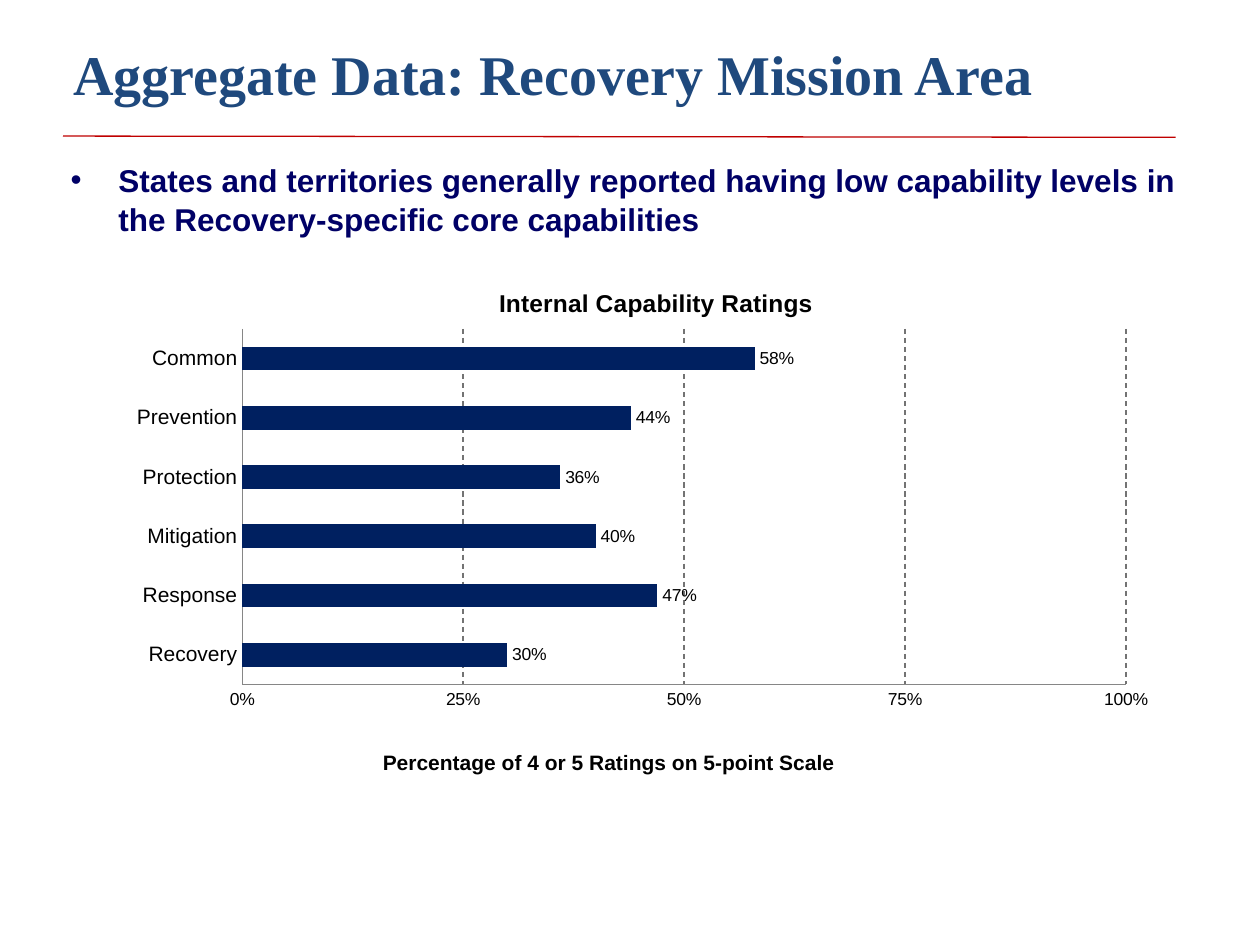
from typing import NamedTuple

from lxml import etree
from pptx import Presentation
from pptx.chart.data import CategoryChartData
from pptx.dml.color import RGBColor
from pptx.enum.chart import XL_CHART_TYPE, XL_LABEL_POSITION, XL_TICK_MARK
from pptx.enum.dml import MSO_LINE
from pptx.enum.text import MSO_ANCHOR, MSO_AUTO_SIZE, PP_ALIGN
from pptx.oxml.ns import qn
from pptx.util import Inches, Pt

BAR_CLUSTERED = XL_CHART_TYPE.BAR_CLUSTERED
OUTSIDE_END = XL_LABEL_POSITION.OUTSIDE_END
NO_TICK = XL_TICK_MARK.NONE
DASH = MSO_LINE.DASH
MIDDLE, TOP = MSO_ANCHOR.MIDDLE, MSO_ANCHOR.TOP
NO_AUTOFIT = MSO_AUTO_SIZE.NONE
LEFT = PP_ALIGN.LEFT

COLORS = {
    "title": "1F497D",
    "bullet": "000066",
    "rule": "C00000",
    "bar": "002060",
    "axis": "868686",
    "grid": "737373",
    "text": "000000",
}


class Rating(NamedTuple):
    mission_area: str
    share: float


RATINGS = [
    Rating("Recovery", 0.30),
    Rating("Response", 0.47),
    Rating("Mitigation", 0.40),
    Rating("Protection", 0.36),
    Rating("Prevention", 0.44),
    Rating("Common", 0.58),
]


def rgb(role: str) -> RGBColor:
    return RGBColor.from_string(COLORS[role])


def style_font(font, size: float, color: str = "text", bold: bool = False,
               name: str = "Arial") -> None:
    font.name, font.size, font.bold = name, Pt(size), bold
    font.color.rgb = rgb(color)


def style_line(line, color: str) -> None:
    line.color.rgb = rgb(color)
    line.width = Pt(0.75)


def write_text(frame, text: str, **font_format):
    """Put one formatted paragraph in a text frame and return it."""
    paragraph = frame.paragraphs[0]
    run = paragraph.add_run()
    run.text = text
    style_font(run.font, **font_format)
    return paragraph


def place(shape, left: float, top: float, width: float, height: float) -> None:
    shape.left, shape.top = Inches(left), Inches(top)
    shape.width, shape.height = Inches(width), Inches(height)


def set_layout(parent, **fractions: float) -> None:
    """Fix a chart part at fractions (x, y, w, h) of the chart area."""
    layout = parent.find(qn("c:layout"))
    if layout is None:
        layout = etree.Element(qn("c:layout"))
        parent.insert(0, layout)
    manual = etree.SubElement(layout, qn("c:manualLayout"))
    if "w" in fractions:
        etree.SubElement(manual, qn("c:layoutTarget"), val="inner")
    for key in ("x", "y"):
        etree.SubElement(manual, qn(f"c:{key}Mode"), val="edge")
    for key, value in fractions.items():
        etree.SubElement(manual, qn(f"c:{key}"), val=str(value))


def add_heading(slide) -> None:
    title = slide.shapes.title
    place(title, 0.48, 0.08, 9, 1)
    frame = title.text_frame
    frame.auto_size, frame.vertical_anchor = NO_AUTOFIT, MIDDLE
    write_text(frame, "Aggregate Data: Recovery Mission Area", size=32,
               color="title", bold=True, name="Times New Roman").alignment = LEFT

    rule = slide.shapes.add_connector(1, Inches(0.5), Inches(1.08),
                                      Inches(9.33), Inches(1.09))
    style_line(rule.line, "rule")
    etree.SubElement(rule._element.spPr, qn("a:effectLst"))


def add_finding(slide) -> None:
    body = slide.placeholders[1]
    place(body, 0.46, 1.21, 9, 6.17)
    frame = body.text_frame
    frame.auto_size, frame.vertical_anchor = NO_AUTOFIT, TOP
    finding = write_text(
        frame,
        "States and territories generally reported having low capability "
        "levels in the Recovery-specific core capabilities",
        size=18, color="bullet", bold=True)
    finding.space_before = Pt(0)
    finding.line_spacing = 1.05
    properties = finding._p.get_or_add_pPr()
    properties.set("marL", str(Inches(0.38)))
    properties.set("indent", str(-Inches(0.38)))
    etree.SubElement(properties, qn("a:buFont"), typeface="Arial")
    etree.SubElement(properties, qn("a:buChar"), char="•")


def add_ratings_chart(slide) -> None:
    data = CategoryChartData(number_format="0%")
    data.categories = [rating.mission_area for rating in RATINGS]
    data.add_series("Series 1", [rating.share for rating in RATINGS])
    chart = slide.shapes.add_chart(
        BAR_CLUSTERED, Inches(0.92), Inches(2.08), Inches(8.35), Inches(4.12),
        data).chart
    style_font(chart.font, 10)
    chart.has_legend = False
    chart.has_title = True
    write_text(chart.chart_title.text_frame, "Internal Capability Ratings",
               size=14, bold=True)

    mission_axis, share_axis = chart.category_axis, chart.value_axis
    for axis, size in ((mission_axis, 12), (share_axis, 10)):
        axis.major_tick_mark = axis.minor_tick_mark = NO_TICK
        style_font(axis.tick_labels.font, size)
        style_line(axis.format.line, "axis")
    mission_axis.has_major_gridlines = False

    share_axis.minimum_scale, share_axis.maximum_scale = 0, 1
    share_axis.major_unit = 0.25
    share_axis.tick_labels.number_format = "0%"
    share_axis.tick_labels.number_format_is_linked = False
    share_axis.has_major_gridlines = True
    gridline = share_axis.major_gridlines.format.line
    style_line(gridline, "grid")
    gridline.dash_style = DASH
    share_axis.has_title = True
    write_text(share_axis.axis_title.text_frame,
               "Percentage of 4 or 5 Ratings on 5-point Scale",
               size=12, bold=True)

    plot = chart.plots[0]
    plot.gap_width = 150
    plot.vary_by_categories = False
    bars = plot.series[0]
    bars.format.fill.solid()
    bars.format.fill.fore_color.rgb = rgb("bar")
    labels = bars.data_labels
    labels.show_value = True
    labels.number_format, labels.number_format_is_linked = "0%", False
    labels.position = OUTSIDE_END
    style_font(labels.font, 10)

    set_layout(chart._chartSpace.chart.plotArea, x=0.12, y=0.13, w=0.84, h=0.69)
    set_layout(chart.chart_title._element, x=0.36, y=0.04)
    set_layout(share_axis.axis_title._element, x=0.25, y=0.94)


def main() -> None:
    presentation = Presentation()
    presentation.slide_width, presentation.slide_height = Inches(10), Inches(7.5)
    slide = presentation.slides.add_slide(presentation.slide_layouts[1])
    add_heading(slide)
    add_finding(slide)
    add_ratings_chart(slide)
    presentation.save("out.pptx")


if __name__ == "__main__":
    main()
